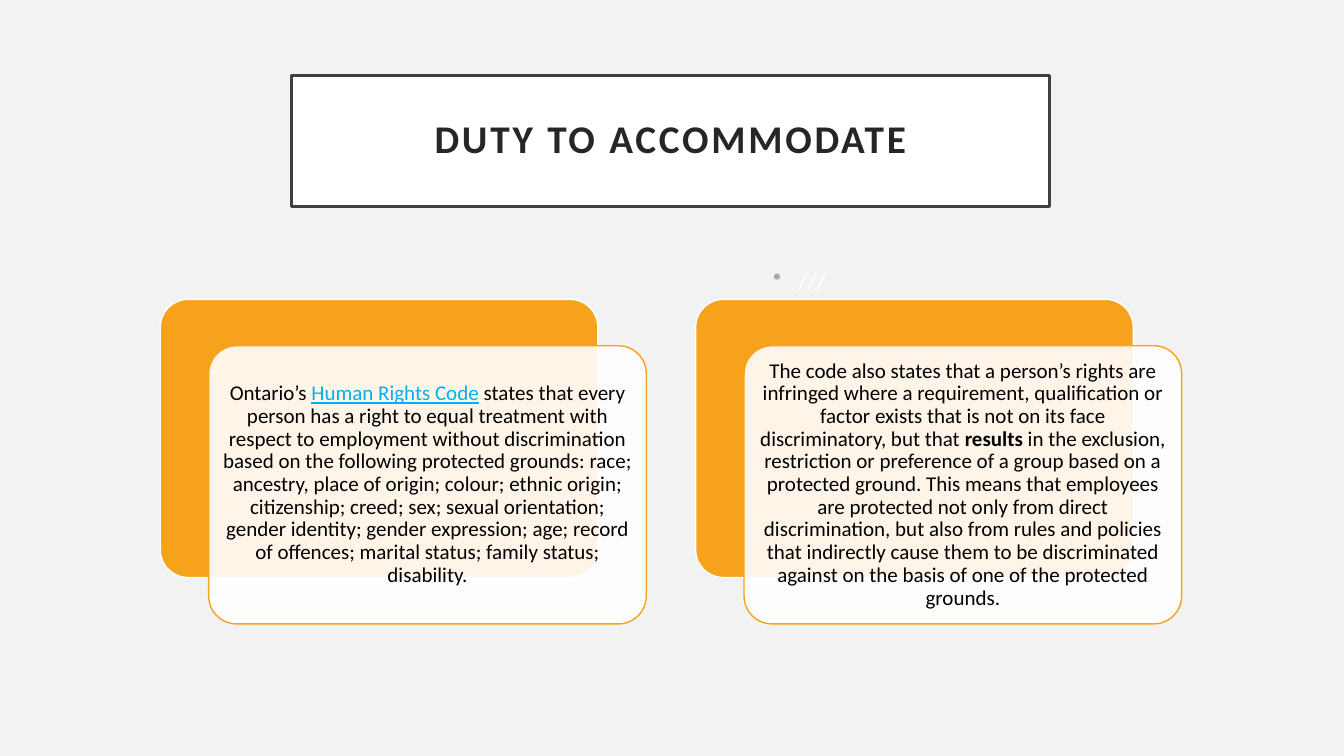
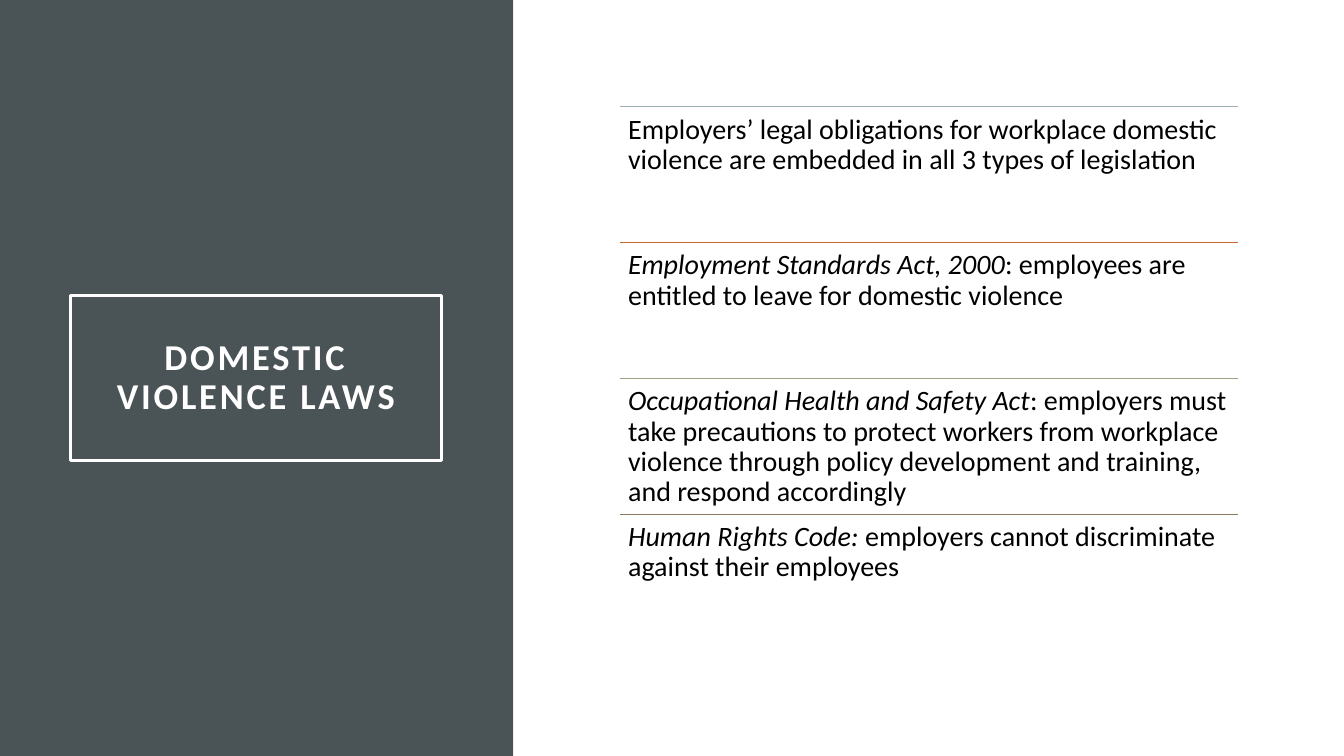
import collections

import lxml.etree
import pptx
import pptx.dml.color
import pptx.enum.shapes
import pptx.enum.text
import pptx.oxml.ns
import pptx.util

RGBColor = pptx.dml.color.RGBColor
Inches = pptx.util.Inches
Pt = pptx.util.Pt
MIDDLE = pptx.enum.text.MSO_ANCHOR.MIDDLE
TOP = pptx.enum.text.MSO_ANCHOR.TOP
CENTER = pptx.enum.text.PP_ALIGN.CENTER
LEFT = pptx.enum.text.PP_ALIGN.LEFT
SHAPES = pptx.enum.shapes.MSO_SHAPE

WHITE = RGBColor(0xFF, 0xFF, 0xFF)
BLACK = RGBColor(0x00, 0x00, 0x00)
PALE_GREY = RGBColor(0xF2, 0xF2, 0xF2)
FRAME_GREY = RGBColor(0x40, 0x40, 0x40)
TITLE_GREY = RGBColor(0x26, 0x26, 0x26)
SLATE = RGBColor(0x4A, 0x53, 0x56)
ORANGE = RGBColor(0xF6, 0xA2, 0x1D)
LINK_BLUE = RGBColor(0x00, 0xB0, 0xF0)
BLUE_GREY = RGBColor(0x9B, 0xAF, 0xB5)
RUST = RGBColor(0xC9, 0x67, 0x31)
SAGE = RGBColor(0x9C, 0xA3, 0x83)
BROWN = RGBColor(0x87, 0x79, 0x5D)

FONT = "Calibri"
SLIDE_WIDTH, SLIDE_HEIGHT = 13.33, 7.5
TITLE_ONLY = 5
LINE_SPACING = 0.9

Box = collections.namedtuple("Box", "left top width height")

CARDS = [
    [
        ("Ontario’s ", {}),
        ("Human Rights Code", {"color": LINK_BLUE, "underline": True}),
        (" states that every person has a right to equal treatment with respect to "
         "employment without discrimination based on the following protected grounds: "
         "race; ancestry, place of origin; colour; ethnic origin; citizenship; creed; "
         "sex; sexual orientation; gender identity; gender expression; age; record of "
         "offences; marital status; family status; disability.", {}),
    ],
    [
        ("The code also states that a person’s rights are infringed where a requirement, "
         "qualification or factor exists that is not on its face discriminatory, but that ", {}),
        ("results", {"bold": True}),
        (" in the exclusion, restriction or preference of a group based on a protected "
         "ground. This means that employees are protected not only from direct "
         "discrimination, but also from rules and policies that indirectly cause them to "
         "be discriminated against on the basis of one of the protected grounds.", {}),
    ],
]

LAWS = [
    (BLUE_GREY, [("Employers’ legal obligations for workplace domestic violence are "
                  "embedded in all 3 types of legislation", {})]),
    (RUST, [("Employment Standards Act, 2000", {"italic": True}),
            (": employees are entitled to leave for domestic violence", {})]),
    (SAGE, [("Occupational Health and Safety Act", {"italic": True}),
            (": employers must take precautions to protect workers from workplace violence "
             "through policy development and training, and respond accordingly", {})]),
    (BROWN, [("Human Rights Code: ", {"italic": True}),
             ("employers cannot discriminate against their employees", {})]),
]


def place(box):
    """Return the box as lengths in slide units."""
    return [Inches(value) for value in box]


def inset(box, margin):
    """Return the box shrunk by the margin on every side."""
    return Box(box.left + margin, box.top + margin,
               box.width - 2 * margin, box.height - 2 * margin)


def set_values(target, values):
    """Set every attribute named in the dict."""
    for name, value in values.items():
        setattr(target, name, value)


def set_line(line, color, width):
    """Give a line its colour and its width in points."""
    line.color.rgb = color
    line.width = Pt(width)


def write_text(shape, runs, size, color=BLACK, align=LEFT, anchor=TOP, margin=0.08,
               **font_values):
    """Write formatted runs into the single paragraph of a shape."""
    frame = shape.text_frame
    set_values(frame, {
        "word_wrap": True, "auto_size": pptx.enum.text.MSO_AUTO_SIZE.NONE,
        "vertical_anchor": anchor,
        "margin_left": Inches(margin), "margin_right": Inches(margin),
        "margin_top": Inches(margin), "margin_bottom": Inches(margin),
    })
    paragraph = frame.paragraphs[0]
    set_values(paragraph, {"alignment": align, "line_spacing": LINE_SPACING})
    for text, emphasis in runs:
        run = paragraph.add_run()
        run.text = text
        values = {"name": FONT, "size": Pt(size), **font_values, **emphasis}
        run.font.color.rgb = values.pop("color", color)
        set_values(run.font, values)
    return paragraph


def add_slide(presentation, background):
    """Add a title-only slide with a plain background."""
    slide = presentation.slides.add_slide(presentation.slide_layouts[TITLE_ONLY])
    slide.background.fill.solid()
    slide.background.fill.fore_color.rgb = background
    return slide


def add_title(slide, box, text, size, color, frame_color, fill=None):
    """Place the title placeholder as a framed box with spaced bold text."""
    title = slide.shapes.title
    set_values(title, dict(zip(Box._fields, place(box))))
    if fill is None:
        title.fill.background()
    else:
        title.fill.solid()
        title.fill.fore_color.rgb = fill
    set_line(title.line, frame_color, 2.5)
    paragraph = write_text(title, [(text, {})], size, color, CENTER, MIDDLE, 0.2, bold=True)
    for run in paragraph.runs:
        run.font._element.set("spc", "200")


def add_panel(slide, kind, box, fill, line_color=None, opacity=100):
    """Add a filled shape, outlined and see-through where asked."""
    panel = slide.shapes.add_shape(kind, *place(box))
    panel.shadow.inherit = False
    panel.fill.solid()
    panel.fill.fore_color.rgb = fill
    if opacity < 100:
        color = panel._element.spPr.find(".//" + pptx.oxml.ns.qn("a:srgbClr"))
        alpha = lxml.etree.SubElement(color, pptx.oxml.ns.qn("a:alpha"))
        alpha.set("val", str(opacity * 1000))
    if line_color is None:
        panel.line.fill.background()
    else:
        set_line(panel.line, line_color, 1)
    return panel


def add_rule(slide, box, color):
    """Draw a thin line along the top edge of the box."""
    left, top, width, _ = place(box)
    rule = slide.shapes.add_connector(
        pptx.enum.shapes.MSO_CONNECTOR.STRAIGHT, left, top, left + width, top)
    set_line(rule.line, color, 0.5)
    lxml.etree.SubElement(rule._element.spPr, pptx.oxml.ns.qn("a:effectLst"))


def add_bullet(slide, box, text):
    """Add a text box with one bulleted line."""
    shape = slide.shapes.add_textbox(*place(box))
    paragraph = write_text(shape, [(text, {})], 17, WHITE, margin=0.1)
    paragraph.line_spacing = 1.0
    shape.text_frame.margin_top = Inches(0.05)
    properties = paragraph._element.get_or_add_pPr()
    properties.set("marL", str(Inches(0.25)))
    properties.set("indent", str(-Inches(0.25)))
    bullet_color = lxml.etree.SubElement(properties, pptx.oxml.ns.qn("a:buClr"))
    lxml.etree.SubElement(bullet_color, pptx.oxml.ns.qn("a:srgbClr")).set("val", str(BLUE_GREY))
    lxml.etree.SubElement(properties, pptx.oxml.ns.qn("a:buChar")).set("char", "•")


def add_card(slide, box, runs):
    """Add an orange card with a translucent text card offset over it."""
    offset_x, offset_y = 0.48, 0.46
    back = Box(box.left, box.top, box.width - offset_x, box.height - offset_y)
    front = back._replace(left=box.left + offset_x, top=box.top + offset_y)
    for layer, fill, line_color, opacity in ((back, ORANGE, WHITE, 100),
                                             (front, WHITE, ORANGE, 90)):
        panel = add_panel(slide, SHAPES.ROUNDED_RECTANGLE, layer, fill, line_color, opacity)
        panel.adjustments[0] = 0.1
    label = slide.shapes.add_textbox(*place(inset(front, 0.08)))
    write_text(label, runs, 15, align=CENTER, anchor=MIDDLE, margin=0.06)


def add_law_list(slide, box, laws):
    """Stack the laws in equal rows, each under its own coloured rule."""
    row_height = box.height / len(laws)
    for index, (color, runs) in enumerate(laws):
        row = box._replace(top=box.top + index * row_height, height=row_height)
        add_rule(slide, row, color)
        write_text(slide.shapes.add_textbox(*place(row)), runs, 20)


def build_duty_slide(presentation):
    """Build the slide with two overlapping cards."""
    slide = add_slide(presentation, PALE_GREY)
    add_title(slide, Box(2.89, 0.75, 7.52, 1.3), "DUTY TO ACCOMMODATE", 28,
              TITLE_GREY, FRAME_GREY, WHITE)
    add_bullet(slide, Box(7.57, 2.59, 4.89, 3.33), "///")
    first_card, pitch = Box(1.59, 2.97, 4.82, 3.22), 5.31
    for index, runs in enumerate(CARDS):
        add_card(slide, first_card._replace(left=first_card.left + index * pitch), runs)


def build_laws_slide(presentation):
    """Build the slide with a dark side panel and a ruled list."""
    slide = add_slide(presentation, WHITE)
    side_panel = add_panel(slide, SHAPES.RECTANGLE, Box(0, 0, 5.09, SLIDE_HEIGHT), SLATE)
    slide.shapes.title._element.addprevious(side_panel._element)
    add_title(slide, Box(0.7, 2.93, 3.68, 1.64), "DOMESTIC VIOLENCE LAWS", 26, WHITE, WHITE)
    add_law_list(slide, Box(6.15, 1.06, 6.13, 5.39), LAWS)


def main():
    """Build and save the presentation."""
    presentation = pptx.Presentation()
    presentation.slide_width = Inches(SLIDE_WIDTH)
    presentation.slide_height = Inches(SLIDE_HEIGHT)
    build_duty_slide(presentation)
    build_laws_slide(presentation)
    presentation.save("out.pptx")


if __name__ == "__main__":
    main()
